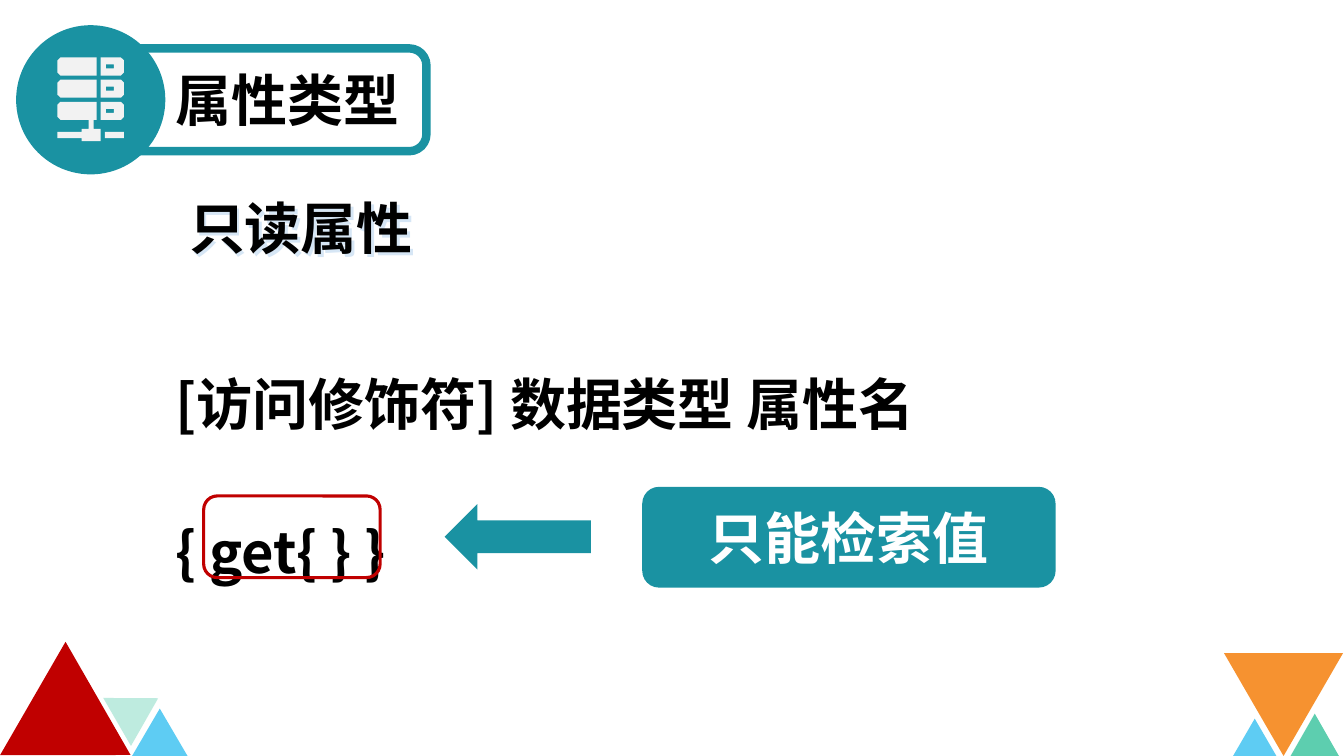
from lxml import etree
from pptx import Presentation
from pptx import util as u
from pptx.dml.color import RGBColor
from pptx.enum import shapes, text
from pptx.oxml.ns import qn

PX = 9144  # 100 px to the inch
FONT = "Noto Sans CJK SC"
HUES = {"teal": "1A92A2", "red": "C00000", "sky": "5ECCF3", "mint": "BEEBDF",
        "green": "5DCEAF", "orange": "F69230", "icon": "F2F2F2",
        "black": "000000", "white": "FFFFFF", "glow": "D6E6F5"}
KIND = shapes.MSO_SHAPE
ALIGN = text.PP_ALIGN


def hue(name):
    return RGBColor.from_string(HUES[name])


def paint(shape, fill=None, line=None, width=0):
    shape.shadow.inherit = False
    if fill:
        shape.fill.solid()
        shape.fill.fore_color.rgb = hue(fill)
    else:
        shape.fill.background()
    if line:
        shape.line.color.rgb = hue(line)
        shape.line.width = u.Pt(width)
    else:
        shape.line.fill.background()
    return shape


def draw(slide, kind, box, turn=0, **look):
    shape = slide.shapes.add_shape(kind, *(n * PX for n in box))
    shape.rotation = turn
    return paint(shape, **look)


def write(shape, lines, align, color="black", wrap=True):
    frame = shape.text_frame
    frame.text = "\n".join(lines)
    frame.word_wrap = wrap
    for para in frame.paragraphs:
        para.alignment = align
        for run in para.runs:
            font = run.font
            font.size, font.bold, font.name = u.Pt(40), True, FONT
            font.color.rgb = hue(color)
            etree.SubElement(font._element, qn("a:ea"), typeface=FONT)
    return frame


def label(slide, box, lines, align):
    shape = slide.shapes.add_textbox(*(n * PX for n in box))
    write(shape, lines, align)
    return shape


def block(x, y, w, h, left=0, right=0):
    """Outline of a bar whose left or right corners are cut."""
    r, b = x + w, y + h
    return [(x + left, y), (r - right, y), (r, y + right), (r, b - right),
            (r - right, b), (x + left, b), (x, b - left), (x, y + left)]


def server(slide, x, y):
    """Three racks with slots, above a network line."""
    parts = []
    for row in range(3):
        top = y + 22 * row
        parts += [block(x, top, 39, 18, left=3),
                  block(x + 43, top, 23, 18, right=3),
                  block(x + 48, top + 7, 8, 4)]
    parts += [block(x + 31, y + 62, 5, 9), block(x, y + 74, 24, 6),
              block(x + 24, y + 71, 19, 12), block(x + 47, y + 74, 19, 6)]
    pen = slide.shapes.build_freeform(*parts[0][0], scale=PX)
    for part in parts:
        pen.move_to(*part[0])
        pen.add_line_segments(part[1:], close=True)
    paint(pen.convert_to_shape(), fill="icon")


def header(slide, x, y):
    """Framed title with a round icon."""
    draw(slide, KIND.ROUNDED_RECTANGLE, (x + 107, y + 23, 300, 102),
         line="teal", width=6)
    draw(slide, KIND.OVAL, (x, y, 148, 148), fill="teal")
    server(slide, x + 41, y + 32)
    title = slide.shapes.title
    title.left, title.top = (x + 148) * PX, (y + 35) * PX
    title.width, title.height = 242 * PX, 77 * PX
    write(title, ["属性类型"], ALIGN.LEFT, wrap=False)


def corners(slide, y):
    """Triangles in both bottom corners, y being the slide's foot."""
    for x, up, w, h, turn, fill in [
            (131, 47, 55, 47, 0, "sky"), (109, 69, 55, 47, 60, "mint"),
            (16, 85, 130, 112, 120, "red"), (1280, 42, 48, 42, 0, "green"),
            (1214, 102, 118, 102, 180, "orange"),
            (1223, 37, 43, 37, 0, "sky")]:
        draw(slide, KIND.ISOSCELES_TRIANGLE, (x, y - up, w, h), turn, fill=fill)


def topic(slide, box):
    """Subheading with a pale shadow."""
    shape = label(slide, box, ["只读属性"], ALIGN.CENTER)
    effect = etree.SubElement(shape._element.spPr, qn("a:effectLst"))
    shade = etree.SubElement(effect, qn("a:outerShdw"), dist="38100",
                             dir="2700000", algn="tl", rotWithShape="0")
    etree.SubElement(shade, qn("a:srgbClr"), val=HUES["glow"])


def syntax(slide, x, y):
    """Property syntax, its marked getter and the callout."""
    code = label(slide, (x, y, 850, 306),
                 ["[访问修饰符] 数据类型 属性名", "{ get{ } }"], ALIGN.JUSTIFY)
    for para in code.text_frame.paragraphs:
        para.line_spacing = 2.2
        props = para._p.get_or_add_pPr()
        props.set("marL", str(57 * PX))
        props.set("indent", str(-57 * PX))
    draw(slide, KIND.ROUNDED_RECTANGLE, (x + 38, y + 210, 175, 81),
         line="red", width=2.25)
    draw(slide, KIND.LEFT_ARROW, (x + 277, y + 218, 145, 65), fill="teal")
    note = draw(slide, KIND.ROUNDED_RECTANGLE, (x + 473, y + 201, 410, 100),
                fill="teal")
    frame = write(note, ["只能检索值"], ALIGN.CENTER, "white")
    frame.vertical_anchor = text.MSO_ANCHOR.MIDDLE


def main():
    deck = Presentation()
    deck.slide_width, deck.slide_height = 1333 * PX, 750 * PX
    slide = deck.slides.add_slide(deck.slide_layouts[5])
    corners(slide, 750)
    header(slide, 16, 25)
    topic(slide, (155, 187, 287, 77))
    syntax(slide, 164, 282)
    deck.save("out.pptx")


if __name__ == "__main__":
    main()
